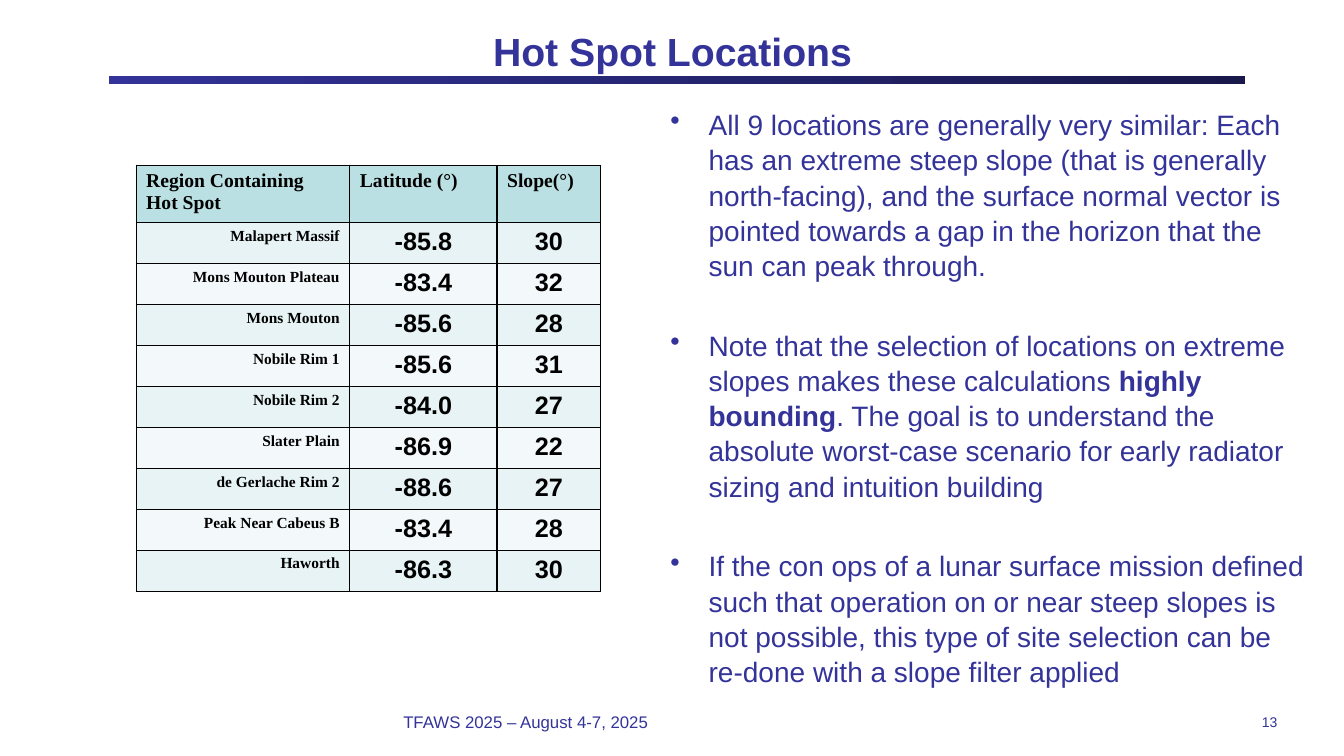
from lxml import etree
from pptx import Presentation
from pptx.dml.color import RGBColor
from pptx.enum import shapes, text
from pptx.oxml import ns
from pptx.util import Inches, Pt

NAVY = RGBColor(0x33, 0x33, 0x99)
DARK = RGBColor(0x18, 0x18, 0x4A)
BLACK = RGBColor(0, 0, 0)
WHITE = RGBColor(0xFF, 0xFF, 0xFF)
TEAL = RGBColor(0xBB, 0xE0, 0xE3)
BANDS = RGBColor(0xE7, 0xF3, 0xF4), RGBColor(0xF3, 0xF9, 0xFA)
SERIF = "Times New Roman"
LEFT, MID, RIGHT = text.PP_ALIGN.LEFT, text.PP_ALIGN.CENTER, text.PP_ALIGN.RIGHT

HEADS = ["Region Containing Hot Spot", "Latitude (°)", "Slope(°)"]
SPOTS = [
    ("Malapert Massif", "-85.8", "30"),
    ("Mons Mouton Plateau", "-83.4", "32"),
    ("Mons Mouton", "-85.6", "28"),
    ("Nobile Rim 1", "-85.6", "31"),
    ("Nobile Rim 2", "-84.0", "27"),
    ("Slater Plain", "-86.9", "22"),
    ("de Gerlache Rim 2", "-88.6", "27"),
    ("Peak Near Cabeus B", "-83.4", "28"),
    ("Haworth", "-86.3", "30"),
]
WIDTHS = [2.12, 1.46, 1.03]

# Each point is a list of runs; every second run is bold.
POINTS = [
    ["All 9 locations are generally very similar: Each has an extreme steep "
     "slope (that is generally north-facing), and the surface normal vector "
     "is pointed towards a gap in the horizon that the sun can peak through."],
    ["Note that the selection of locations on extreme slopes makes these "
     "calculations ", "highly bounding",
     ". The goal is to understand the absolute worst-case scenario for early "
     "radiator sizing and intuition building"],
    ["If the con ops of a lunar surface mission defined such that operation "
     "on or near steep slopes is not possible, this type of site selection "
     "can be re-done with a slope filter applied"],
]


def write(para, words, size, color=NAVY, bold=False, face="Arial", align=LEFT):
    para.alignment = align
    run = para.add_run()
    run.text = words
    font = run.font
    font.size, font.bold, font.name = Pt(size), bold, face
    font.color.rgb = color


def add_box(slide, x, y, w, h, pad=(0, 0), anchor=text.MSO_ANCHOR.MIDDLE):
    """Add a wrapping text box; pad is the side and the top inset."""
    frame = slide.shapes.add_textbox(*map(Inches, (x, y, w, h))).text_frame
    frame.word_wrap = True
    frame.vertical_anchor = anchor
    frame.margin_left = frame.margin_right = Inches(pad[0])
    frame.margin_top = frame.margin_bottom = Inches(pad[1])
    return frame


def add_rect(slide, x, y, w, h):
    rect = slide.shapes.add_shape(
        shapes.MSO_SHAPE.RECTANGLE, *map(Inches, (x, y, w, h)))
    rect.shadow.inherit = False
    rect.line.fill.background()
    return rect


def add_rule(slide):
    fill = add_rect(slide, 0.98, 0.75, 11.37, 0.08).fill
    fill.gradient()
    fill.gradient_angle = 0
    for stop, color in zip(fill.gradient_stops, (NAVY, DARK)):
        stop.color.rgb = color
    for stop, place in zip(fill.gradient_stops, (0, 1)):
        stop.position = place


def add_bullet(para):
    props = para._p.get_or_add_pPr()
    props.set("marL", str(Inches(0.38)))
    props.set("indent", str(Inches(-0.38)))
    etree.SubElement(props, ns.qn("a:buChar")).set("char", "•")


def add_points(slide):
    frame = add_box(slide, 6.55, 1, 6.51, 5.92, (0.1, 0.05),
                    text.MSO_ANCHOR.TOP)
    for i, runs in enumerate(POINTS):
        para = frame.add_paragraph() if i else frame.paragraphs[0]
        add_bullet(para)
        para.line_spacing = 1.05
        if i:
            para.space_before = Pt(31.6)
        for j, words in enumerate(runs):
            write(para, words, 20, bold=j % 2 == 1)


def set_cell(cell, words, fill, **style):
    props = cell._tc.get_or_add_tcPr()
    for side in ("lnL", "lnR", "lnT", "lnB"):
        line = etree.SubElement(props, ns.qn("a:" + side), w=str(Pt(1)))
        solid = etree.SubElement(line, ns.qn("a:solidFill"))
        etree.SubElement(solid, ns.qn("a:srgbClr"), val=str(BLACK))
    cell.fill.solid()
    cell.fill.fore_color.rgb = fill
    write(cell.text_frame.paragraphs[0], words, color=BLACK, bold=True, **style)


def add_spots(slide):
    table = slide.shapes.add_table(
        len(SPOTS) + 1, len(HEADS), Inches(1.35), Inches(1.64),
        Inches(sum(WIDTHS)), Inches(4.2)).table
    for col, width in zip(table.columns, WIDTHS):
        col.width = Inches(width)
    for i, row in enumerate(table.rows):
        row.height = Inches(3.66 / len(SPOTS) if i else 0.54)
    for j, head in enumerate(HEADS):
        set_cell(table.cell(0, j), head, TEAL, size=14, face=SERIF)
    for i, spot in enumerate(SPOTS):
        band = BANDS[i % 2]
        name, *values = spot
        set_cell(table.cell(i + 1, 0), name, band,
                 size=11, face=SERIF, align=RIGHT)
        for j, value in enumerate(values, 1):
            set_cell(table.cell(i + 1, j), value, band, size=18, align=MID)


def main():
    deck = Presentation()
    deck.slide_width, deck.slide_height = Inches(13.33), Inches(7.5)
    slide = deck.slides.add_slide(deck.slide_layouts[6])
    add_rule(slide)
    title = add_box(slide, 0.67, 0.21, 12, 0.58, (0.1, 0))
    write(title.paragraphs[0], "Hot Spot Locations", 28, bold=True, align=MID)
    add_points(slide)
    foot = add_box(slide, 4, 7, 5.33, 0.33)
    write(foot.paragraphs[0], "TFAWS 2025 – August 4-7, 2025", 12)
    number = add_box(slide, 9.89, 7, 2.78, 0.33)
    write(number.paragraphs[0], "13", 10, align=RIGHT)
    add_spots(slide)
    corner = add_rect(slide, 0, 0, 1.08, 1)
    corner.fill.solid()
    corner.fill.fore_color.rgb = WHITE
    deck.save("out.pptx")


if __name__ == "__main__":
    main()
